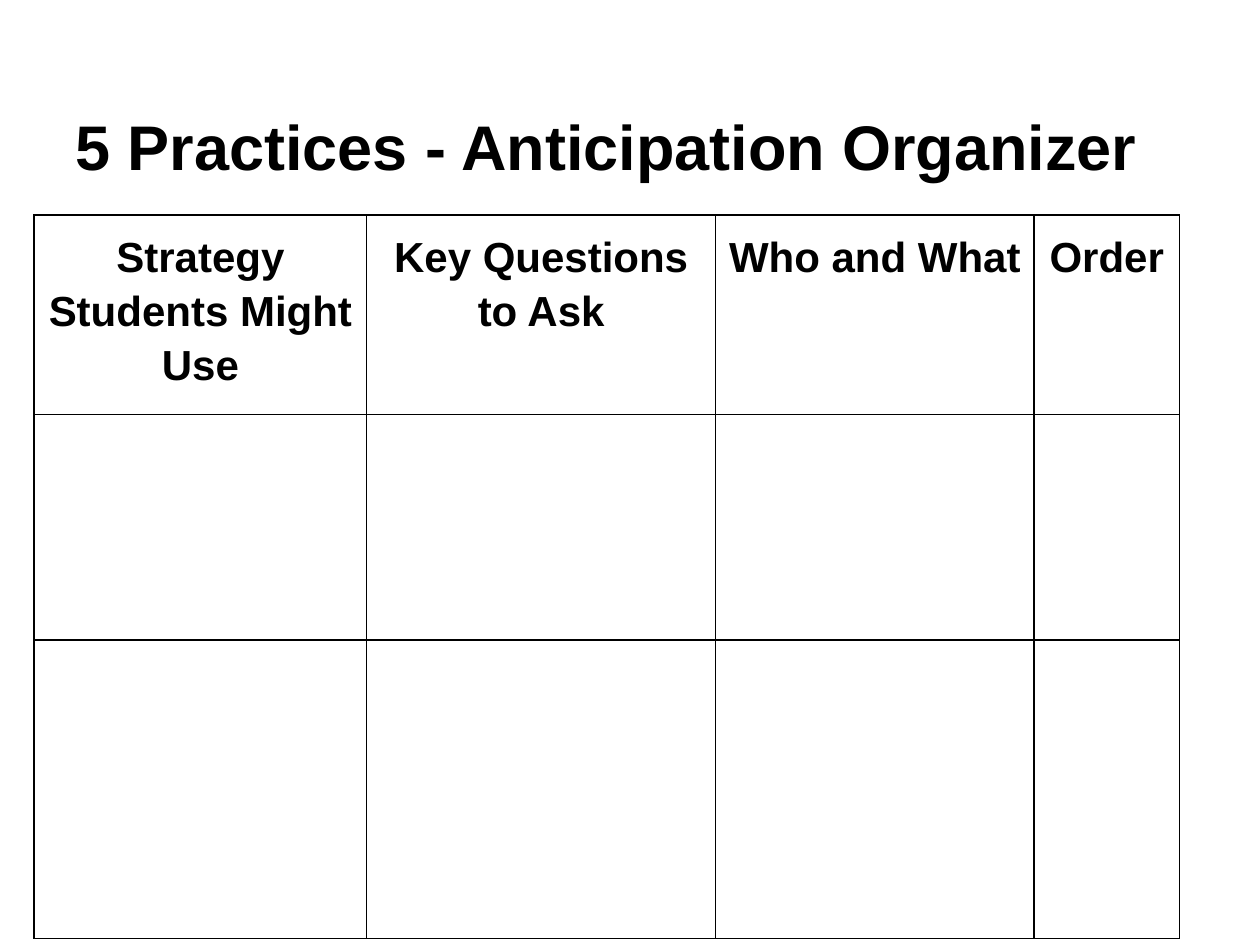
from lxml import etree
from pptx import Presentation
from pptx.dml.color import RGBColor
from pptx.enum.text import MSO_ANCHOR, PP_ALIGN
from pptx.oxml.ns import qn
from pptx.util import Pt

LEFT = PP_ALIGN.LEFT
MID = PP_ALIGN.CENTER
BASE = MSO_ANCHOR.BOTTOM
HUES = {"ink": "000000", "page": "FFFFFF"}
HEADS = ["Strategy Students Might Use", "Key Questions to Ask", "Who and What", "Order"]
COLS = [190, 199.5, 182, 83]
ROWS = [65.5, 129, 170.5]


def write(frame, text, size=24, align=LEFT, space=1, bold=True, font="Arial", hue="ink"):
    para = frame.paragraphs[0]
    para.alignment = align
    para.line_spacing = space
    run = para.add_run()
    run.text = text
    run.font.name = font
    run.font.size = Pt(size)
    run.font.bold = bold
    run.font.color.rgb = RGBColor.from_string(HUES[hue])


class Page:
    def __init__(self, deck, rule=1, side=5, edge=7.2):
        self.slide = deck.slides.add_slide(deck.slide_layouts[6])
        self.rule, self.side, self.edge = rule, side, edge

    def title(self, text, left, top, width, height):
        frame = self.slide.shapes.add_textbox(Pt(left), Pt(top), Pt(width), Pt(height)).text_frame
        frame.word_wrap = True
        frame.vertical_anchor = BASE
        frame.margin_left = frame.margin_right = Pt(self.edge)
        frame.margin_top = frame.margin_bottom = Pt(self.edge)
        write(frame, text, size=36)

    def border(self, cell):
        props = cell._tc.get_or_add_tcPr()
        for spot, tag in enumerate(("a:lnL", "a:lnR", "a:lnT", "a:lnB")):
            line = etree.Element(qn(tag), w=str(Pt(self.rule)))
            fill = etree.SubElement(line, qn("a:solidFill"))
            etree.SubElement(fill, qn("a:srgbClr"), val=HUES["ink"])
            props.insert(spot, line)

    def table(self, heads, cols, rows, left, top):
        grid = self.slide.shapes.add_table(
            len(rows), len(cols), Pt(left), Pt(top), Pt(sum(cols)), Pt(sum(rows))
        ).table
        grid.first_row = grid.horz_banding = False
        for col, width in zip(grid.columns, cols):
            col.width = Pt(width)
        for row, height in zip(grid.rows, rows):
            row.height = Pt(height)
        for cell in grid.iter_cells():
            cell.margin_left = cell.margin_right = Pt(self.side)
            cell.margin_top = cell.margin_bottom = Pt(self.edge)
            cell.fill.solid()
            cell.fill.fore_color.rgb = RGBColor.from_string(HUES["page"])
            self.border(cell)
        for cell, text in zip(grid.rows[0].cells, heads):
            write(cell.text_frame, text, align=MID, space=1.15)


def main():
    deck = Presentation()
    deck.slide_width, deck.slide_height = Pt(720), Pt(540)
    page = Page(deck)
    page.title("5 Practices - Anticipation Organizer", 36, 21.6, 648, 90)
    page.table(HEADS, COLS, ROWS, 19.5, 123)
    deck.save("out.pptx")


if __name__ == "__main__":
    main()
